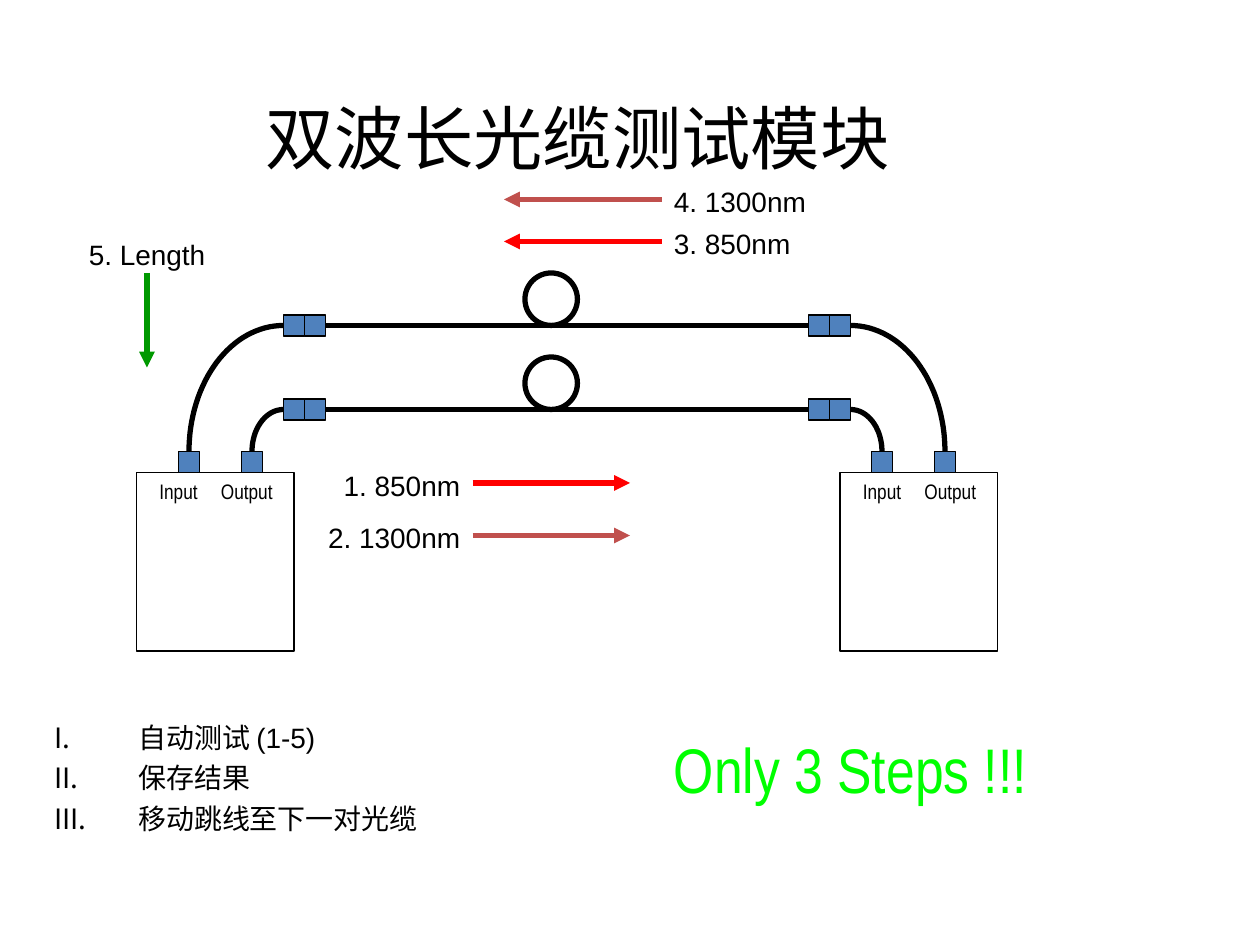
from math import cos, pi, sin

from lxml.etree import SubElement
from pptx import Presentation
from pptx.dml.color import RGBColor
from pptx.enum.shapes import MSO_CONNECTOR, MSO_SHAPE
from pptx.enum.text import MSO_ANCHOR, PP_ALIGN
from pptx.oxml.ns import qn
from pptx.util import Cm, Pt

BLACK = RGBColor(0x00, 0x00, 0x00)
BLUE = RGBColor(0x4F, 0x81, 0xBD)
RED = RGBColor(0xFF, 0x00, 0x00)
BRICK = RGBColor(0xC0, 0x50, 0x4D)
GREEN = RGBColor(0x00, 0x99, 0x00)
LIME = RGBColor(0x00, 0xFF, 0x00)
LEFT, CENTER, RIGHT = PP_ALIGN.LEFT, PP_ALIGN.CENTER, PP_ALIGN.RIGHT

# All positions are in grid steps: twelve to the inch.
STEP_CM = 2.54 / 12
MIRROR_SPAN = 108  # left edge + right edge of the symmetric drawing
PLUG = 2
LOOP = 5
LABEL_HEIGHT = 4.4

TITLE = "双波长光缆测试模块"
STEPS = ["自动测试 (1-5)", "保存结果", "移动跳线至下一对光缆"]
SLOGAN = "Only 3 Steps !!!"
CABLE_HEIGHTS = [31, 39]
CABLE_ENDS = (31, 77)
TESTER = (13, 45, 15, 17)
TESTER_PLUGS = [(29, 30), (27, 30), (29, 38), (27, 38), (17, 43), (23, 43)]
PATCH_CORDS = [((27, 31), (18, 43)), ((27, 39), (24, 43))]
PORT_LABELS = [("Input", 13, 8), ("Output", 19, 9), ("Input", 80, 8), ("Output", 86, 9)]
# text, left, top, width, alignment, arrow start, arrow tip, arrow colour
MEASUREMENTS = [
    ("1. 850nm", 30, 44, 15, RIGHT, (45, 46), (60, 46), RED),
    ("2. 1300nm", 29, 49, 16, RIGHT, (45, 51), (60, 51), BRICK),
    ("3. 850nm", 63, 21, 16, LEFT, (63, 23), (48, 23), RED),
    ("4. 1300nm", 63, 17, 16, LEFT, (63, 19), (48, 19), BRICK),
    ("5. Length", 6, 22, 16, CENTER, (14, 26), (14, 35), GREEN),
]


def grid(*steps):
    return [Cm(step * STEP_CM) for step in steps]


def add_outline(shapes, kind, left, top, width, height, line_width, fill=None):
    shape = shapes.add_shape(kind, *grid(left, top, width, height))
    shape.shadow.inherit = False
    if fill is None:
        shape.fill.background()
    else:
        shape.fill.solid()
        shape.fill.fore_color.rgb = fill
    shape.line.color.rgb = BLACK
    shape.line.width = Pt(line_width)


def add_plug(shapes, left, top):
    add_outline(shapes, MSO_SHAPE.RECTANGLE, left, top, PLUG, PLUG, 0.75, BLUE)


def add_line(shapes, start, end, color, arrow=False):
    line = shapes.add_connector(MSO_CONNECTOR.STRAIGHT, *grid(*start, *end))
    line.line.color.rgb = color
    line.line.width = Pt(3)
    if arrow:
        SubElement(line.line._get_or_add_ln(), qn("a:tailEnd"), type="triangle")
    SubElement(line._element.spPr, qn("a:effectLst"))


def add_patch_cord(shapes, start, end, segments=32):
    """Draw a quarter ellipse, level at start and upright at end."""
    (start_x, start_y), (end_x, end_y) = start, end
    angles = [pi / 2 * index / segments for index in range(segments + 1)]
    points = [
        grid(start_x + (end_x - start_x) * sin(angle), end_y - (end_y - start_y) * cos(angle))
        for angle in angles
    ]
    builder = shapes.build_freeform(*points[0])
    builder.add_line_segments(points[1:], close=False)
    cord = builder.convert_to_shape()
    cord.shadow.inherit = False
    cord.fill.background()
    cord.line.color.rgb = BLACK
    cord.line.width = Pt(3)


def set_font(paragraph, name, size, color):
    paragraph.font.name = name
    paragraph.font.size = Pt(size)
    paragraph.font.color.rgb = color


def add_text(shapes, text, area, alignment, font, size, color=BLACK, wrap=True):
    frame = shapes.add_textbox(*grid(*area)).text_frame
    frame.word_wrap = wrap
    paragraph = frame.paragraphs[0]
    paragraph.text = text
    paragraph.alignment = alignment
    set_font(paragraph, font, size, color)


def add_title(shapes):
    title = shapes.title
    title.left, title.top, title.width, title.height = grid(1, 9, 108, 8)
    title.text_frame.text = TITLE
    title.text_frame.vertical_anchor = MSO_ANCHOR.MIDDLE
    paragraph = title.text_frame.paragraphs[0]
    paragraph.alignment = CENTER
    set_font(paragraph, "Calibri", 39.6, BLACK)


def add_steps(shapes):
    frame = shapes.add_textbox(*grid(4, 68, 55, 14)).text_frame
    frame.word_wrap = True
    indent = grid(8)[0]
    for index, step in enumerate(STEPS):
        paragraph = frame.add_paragraph() if index else frame.paragraphs[0]
        paragraph.text = step
        if index:
            paragraph.space_before = Pt(4)
        properties = paragraph._p.get_or_add_pPr()
        properties.set("marL", str(indent))
        properties.set("indent", str(-indent))
        SubElement(properties, qn("a:buFont"), typeface="+mj-lt")
        SubElement(properties, qn("a:buAutoNum"), type="romanUcPeriod")
        set_font(paragraph, "Arial", 16, BLACK)


def add_tester(shapes, mirrored):
    def place(left, width=0):
        return MIRROR_SPAN - left - width if mirrored else left

    left, top, width, height = TESTER
    add_outline(shapes, MSO_SHAPE.RECTANGLE, place(left, width), top, width, height, 0.75)
    for plug_left, plug_top in TESTER_PLUGS:
        add_plug(shapes, place(plug_left, PLUG), plug_top)
    for (start_x, start_y), (end_x, end_y) in PATCH_CORDS:
        add_patch_cord(shapes, (place(start_x), start_y), (place(end_x), end_y))


def add_cable(shapes, height):
    start, end = CABLE_ENDS
    add_line(shapes, (start, height), (end, height), BLACK)
    add_outline(shapes, MSO_SHAPE.OVAL, 50, height - LOOP, LOOP, LOOP, 3)


def main():
    deck = Presentation()
    deck.slide_width, deck.slide_height = Cm(25.4), Cm(19.05)
    shapes = deck.slides.add_slide(deck.slide_layouts[5]).shapes
    add_title(shapes)
    add_steps(shapes)
    for height in CABLE_HEIGHTS:
        add_cable(shapes, height)
    for mirrored in (True, False):
        add_tester(shapes, mirrored)
    for text, left, top, width, alignment, start, tip, color in MEASUREMENTS:
        add_line(shapes, start, tip, color, arrow=True)
        add_text(shapes, text, (left, top, width, LABEL_HEIGHT), alignment, "Arial", 16)
    for text, left, width in PORT_LABELS:
        add_text(shapes, text, (left, 45, width, 3.6), CENTER, "Arial Narrow", 12)
    add_text(shapes, SLOGAN, (55, 69, 52, 12), CENTER, "Arial Narrow", 36, LIME, wrap=False)
    deck.save("out.pptx")


if __name__ == "__main__":
    main()
